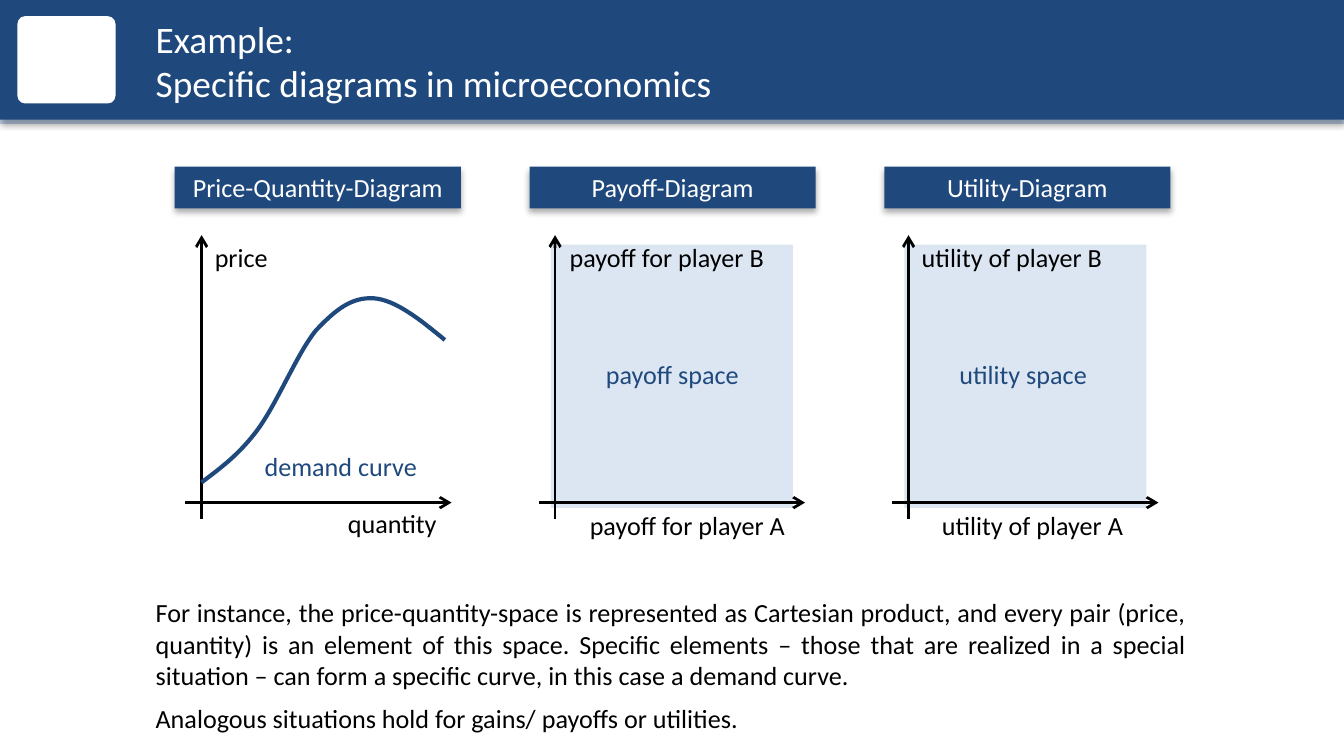
import pptx
import pptx.util
import pptx.dml.color
import pptx.enum.shapes
import pptx.enum.text
import pptx.oxml.ns
from lxml import etree

NAVY, PALE, SKY, WHITE, BLACK = "1F497D", "DCE6F2", "C6D9F1", "FFFFFF", "000000"
W = 10
H = W * 9 / 16
PANEL_X, PANEL_STEP = 1.5, 2.63
HEAD_X, HEAD_STEP = 1.3, 2.64
AXIS_TOP, AXIS_Y = 1.75, 3.74
LABEL_H = 0.34

TITLE = "Example:\vSpecific diagrams in microeconomics"
PANELS = [
    {"head": "Price-Quantity-Diagram", "space": False, "labels": [
        ("price", 0, AXIS_TOP, 0.6, BLACK),
        ("quantity", 0.99, AXIS_Y - 0.01, 0.87, BLACK),
        ("demand curve", 0.37, 3.3, 1.35, NAVY)]},
    {"head": "Payoff-Diagram", "space": True, "labels": [
        ("payoff for player B", 0.01, AXIS_TOP, 1.66, BLACK),
        ("payoff for player A", 0.16, AXIS_Y, 1.67, BLACK),
        ("payoff space", 0.28, 2.62, 1.2, NAVY)]},
    {"head": "Utility-Diagram", "space": True, "labels": [
        ("utility of player B", 0, AXIS_TOP, 1.56, BLACK),
        ("utility of player A", 0.15, AXIS_Y, 1.57, BLACK),
        ("utility space", 0.28, 2.62, 1.16, NAVY)]},
]
DEMAND = [(1.5, 3.59), (1.63, 3.49), (1.76, 3.4), (1.9, 3.22),
          (2.05, 3.03), (2.21, 2.63), (2.35, 2.46),
          (2.5, 2.3), (2.62, 2.21), (2.78, 2.22),
          (2.94, 2.23), (3.13, 2.38), (3.31, 2.53)]
NOTES = [
    "For instance, the price-quantity-space is represented as Cartesian product, "
    "and every pair (price, quantity) is an element of this space. Specific elements "
    "– those that are realized in a special situation – can form a specific curve, "
    "in this case a demand curve.",
    "Analogous situations hold for gains/ payoffs or utilities.",
]

SHAPE = pptx.enum.shapes.MSO_SHAPE
ALIGN = pptx.enum.text.PP_ALIGN
ANCHOR = pptx.enum.text.MSO_ANCHOR
inch = pptx.util.Inches

prs = pptx.Presentation()
prs.slide_width, prs.slide_height = inch(W), inch(H)
s = prs.slides.add_slide(prs.slide_layouts[6])


def rgb(color):
    return pptx.dml.color.RGBColor.from_string(color)


def child(parent, tag, **attrs):
    return etree.SubElement(parent, pptx.oxml.ns.qn(tag), attrs)


def write(sp, paragraphs, size=14, color=BLACK, align=ALIGN.LEFT,
          anchor=ANCHOR.TOP, wrap=True, after=0):
    tf = sp.text_frame
    tf.word_wrap, tf.vertical_anchor = wrap, anchor
    for i, text in enumerate(paragraphs):
        p = tf.add_paragraph() if i else tf.paragraphs[0]
        p.text = text
        p.alignment, p.space_after = align, pptx.util.Pt(after)
        for r in p.runs:
            r.font.name, r.font.size = "Calibri", pptx.util.Pt(size)
            r.font.color.rgb = rgb(color)


def text_box(paragraphs, x, y, w, h, **fmt):
    write(s.shapes.add_textbox(inch(x), inch(y), inch(w), inch(h)), paragraphs, **fmt)


def box(x, y, w, h, fill, kind=SHAPE.RECTANGLE, shadow=False):
    sp = s.shapes.add_shape(kind, inch(x), inch(y), inch(w), inch(h))
    sp.shadow.inherit = False
    sp.fill.solid()
    sp.fill.fore_color.rgb = rgb(fill)
    sp.line.fill.background()
    if shadow:
        effects = sp._element.spPr.find(pptx.oxml.ns.qn("a:effectLst"))
        outer = child(effects, "a:outerShdw", blurRad="44450", dist="27940",
                      dir="5400000", algn="t", rotWithShape="0")
        child(child(outer, "a:srgbClr", val=BLACK), "a:alpha", val="32000")
    return sp


def line(x1, y1, x2, y2, color=BLACK, width=1.5, arrow=False):
    c = s.shapes.add_connector(pptx.enum.shapes.MSO_CONNECTOR.STRAIGHT,
                               inch(x1), inch(y1), inch(x2), inch(y2))
    c.line.color.rgb, c.line.width = rgb(color), pptx.util.Pt(width)
    if arrow:
        child(c.line._get_or_add_ln(), "a:tailEnd", type="arrow")
    child(c._element.spPr, "a:effectLst")


def bezier(points, steps=16):
    yield points[0]
    for i in range(0, len(points) - 1, 3):
        for k in range(1, steps + 1):
            t = k / steps
            weights = ((1 - t) ** 3, 3 * t * (1 - t) ** 2, 3 * t * t * (1 - t), t ** 3)
            yield tuple(sum(b * pt[axis] for b, pt in zip(weights, points[i:i + 4]))
                        for axis in (0, 1))


def curve(points, color, width):
    start, *rest = [(inch(x), inch(y)) for x, y in bezier(points)]
    builder = s.shapes.build_freeform(*start)
    builder.add_line_segments(rest, close=False)
    sp = builder.convert_to_shape()
    sp.shadow.inherit = False
    sp.fill.background()
    sp.line.color.rgb, sp.line.width = rgb(color), pptx.util.Pt(width)


line(0, 0.9, W, 0.9, SKY, 3)
box(0, 0, W, 0.89, NAVY, shadow=True)
badge = box(0.13, 0.12, 0.73, 0.65, WHITE, SHAPE.ROUNDED_RECTANGLE)
badge.adjustments[0] = 0.09
text_box([TITLE], 1.06, 0.06, 8.82, 0.78, size=20, color=WHITE, anchor=ANCHOR.MIDDLE)

for i, panel in enumerate(PANELS):
    x = PANEL_X + i * PANEL_STEP
    if panel["space"]:
        box(x - 0.03, 1.82, 1.8, 1.96, PALE)
    line(x, AXIS_Y + 0.12, x, AXIS_TOP, arrow=True)
    line(x - 0.12, AXIS_Y, x + 1.86, AXIS_Y, arrow=True)
    if not panel["space"]:
        curve(DEMAND, NAVY, 2.25)
    for text, dx, y, w, color in panel["labels"]:
        text_box([text], x + dx, y, w, LABEL_H, color=color, wrap=False)
    head = box(HEAD_X + i * HEAD_STEP, 1.24, 2.13, 0.31, NAVY, shadow=True)
    write(head, [panel["head"]], color=WHITE, align=ALIGN.CENTER, anchor=ANCHOR.MIDDLE)

text_box(NOTES, 1.06, 4.39, 7.87, 1.13, align=ALIGN.JUSTIFY, after=6)
prs.save("out.pptx")
